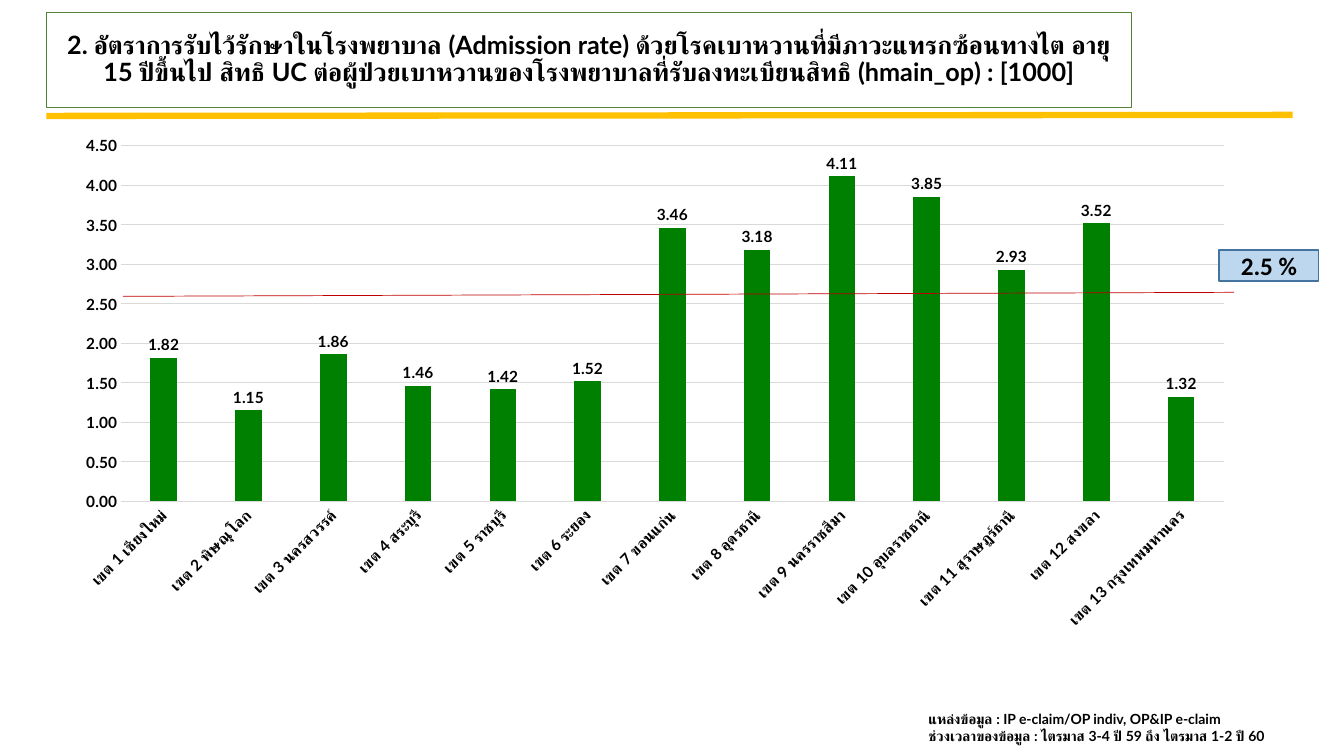
from dataclasses import dataclass

from lxml.etree import SubElement
from pptx import Presentation
from pptx.chart.data import CategoryChartData
from pptx.dml.color import RGBColor
from pptx.enum.chart import XL_CHART_TYPE as ChartType
from pptx.enum.chart import XL_LABEL_POSITION as LabelPos
from pptx.enum.chart import XL_TICK_MARK as Tick
from pptx.enum.shapes import MSO_CONNECTOR as Connector
from pptx.enum.shapes import MSO_SHAPE as Shape
from pptx.enum.text import MSO_ANCHOR as Anchor
from pptx.enum.text import MSO_AUTO_SIZE as AutoSize
from pptx.enum.text import PP_ALIGN as Align
from pptx.oxml.ns import qn
from pptx.util import Inches, Pt

BLACK = RGBColor(0x00, 0x00, 0x00)
WHITE = RGBColor(0xFF, 0xFF, 0xFF)
GOLD = RGBColor(0xFF, 0xC0, 0x00)
RED = RGBColor(0xC0, 0x00, 0x00)
GREEN = RGBColor(0x00, 0x80, 0x00)
DARK_GREEN = RGBColor(0x54, 0x82, 0x35)
GRID_GREY = RGBColor(0xD9, 0xD9, 0xD9)
PALE_BLUE = RGBColor(0xBD, 0xD7, 0xEE)
STEEL_BLUE = RGBColor(0x43, 0x73, 0x9E)

TITLE = (
    "2. อัตราการรับไว้รักษาในโรงพยาบาล (Admission rate) "
    "ด้วยโรคเบาหวานที่มีภาวะแทรกซ้อนทางไต อายุ 15 ปีขึ้นไป สิทธิ UC "
    "ต่อผู้ป่วยเบาหวานของโรงพยาบาลที่รับลงทะเบียนสิทธิ (hmain_op) : [1000]"
)
SOURCE_NOTES = (
    "แหล่งข้อมูล : IP e-claim/OP indiv, OP&IP e-claim",
    "ช่วงเวลาของข้อมูล : ไตรมาส 3-4 ปี 59 ถึง ไตรมาส 1-2 ปี 60",
)
ADMISSION_RATES = {
    "เขต 1 เชียงใหม่": 1.82,
    "เขต 2 พิษณุโลก": 1.15,
    "เขต 3 นครสวรรค์": 1.86,
    "เขต 4 สระบุรี": 1.46,
    "เขต 5 ราชบุรี": 1.42,
    "เขต 6 ระยอง": 1.52,
    "เขต 7 ขอนแก่น": 3.46,
    "เขต 8 อุดรธานี": 3.18,
    "เขต 9 นครราชสีมา": 4.11,
    "เขต 10 อุบลราชธานี": 3.85,
    "เขต 11 สุราษฎร์ธานี": 2.93,
    "เขต 12 สงขลา": 3.52,
    "เขต 13 กรุงเทพมหานคร": 1.32,
}


@dataclass
class Rule:
    x1: float
    y1: float
    x2: float
    y2: float
    color: RGBColor
    weight: float


TITLE_RULE = Rule(0.46, 1.15, 12.82, 1.14, GOLD, 4.5)
TARGET_RULE = Rule(1.22, 2.94, 12.24, 2.9, RED, 0.5)


def style_font(font, size: float, name: str = "Lato") -> None:
    font.name = name
    font.size = Pt(size)
    font.bold = True
    font.color.rgb = BLACK


def add_run(p, text: str, size: float, name: str = "Lato") -> None:
    r = p.add_run()
    r.text = text
    style_font(r.font, size, name)


def paint(sp, fill: RGBColor, line: RGBColor, weight: float) -> None:
    sp.fill.solid()
    sp.fill.fore_color.rgb = fill
    sp.line.color.rgb = line
    sp.line.width = Pt(weight)


def add_rule(slide, rule: Rule) -> None:
    ends = [Inches(v) for v in (rule.x1, rule.y1, rule.x2, rule.y2)]
    line = slide.shapes.add_connector(Connector.STRAIGHT, *ends)
    line.line.color.rgb = rule.color
    line.line.width = Pt(rule.weight)
    SubElement(line._element.spPr, qn("a:effectLst"))


def fill_title(slide) -> None:
    sp = slide.shapes.title
    sp.left, sp.top = Inches(0.46), Inches(0.12)
    sp.width, sp.height = Inches(10.76), Inches(0.95)
    paint(sp, WHITE, DARK_GREEN, 0.75)
    tf = sp.text_frame
    tf.word_wrap = True
    tf.auto_size = AutoSize.NONE
    tf.vertical_anchor = Anchor.MIDDLE
    p = tf.paragraphs[0]
    p.alignment = Align.CENTER
    p.line_spacing = 0.9
    add_run(p, TITLE, 18)


def add_rate_chart(slide) -> None:
    data = CategoryChartData(number_format="0.00")
    data.categories = list(ADMISSION_RATES)
    data.add_series("Series 1", list(ADMISSION_RATES.values()))
    chart = slide.shapes.add_chart(
        ChartType.COLUMN_CLUSTERED,
        Inches(0.62), Inches(1.25), Inches(11.75), Inches(5.09), data,
    ).chart
    chart.has_legend = False
    chart.has_title = False
    style_font(chart.font, 11)

    for axis in (chart.category_axis, chart.value_axis):
        axis.major_tick_mark = axis.minor_tick_mark = Tick.NONE
        style_font(axis.tick_labels.font, 11)
    regions, rates = chart.category_axis, chart.value_axis
    regions.format.line.color.rgb = GRID_GREY
    regions.format.line.width = Pt(0.75)
    regions._element.txPr.bodyPr.set("rot", "-2700000")
    rates.minimum_scale, rates.maximum_scale, rates.major_unit = 0, 4.5, 0.5
    rates.format.line.fill.background()
    rates.major_gridlines.format.line.color.rgb = GRID_GREY
    rates.major_gridlines.format.line.width = Pt(0.75)
    rates.tick_labels.number_format = "0.00"
    rates.tick_labels.number_format_is_linked = False

    plot = chart.plots[0]
    plot.gap_width, plot.overlap = 219, -27
    plot.vary_by_categories = False
    bars = plot.series[0]
    bars.format.fill.solid()
    bars.format.fill.fore_color.rgb = GREEN
    labels = bars.data_labels
    labels.show_value = True
    labels.position = LabelPos.OUTSIDE_END
    labels.number_format = "0.00"
    labels.number_format_is_linked = False
    style_font(labels.font, 11)


def add_target_badge(slide) -> None:
    sp = slide.shapes.add_shape(
        Shape.RECTANGLE, Inches(12.09), Inches(2.48), Inches(0.99), Inches(0.31)
    )
    sp.shadow.inherit = False
    paint(sp, PALE_BLUE, STEEL_BLUE, 1)
    tf = sp.text_frame
    tf.vertical_anchor = Anchor.MIDDLE
    p = tf.paragraphs[0]
    p.alignment = Align.CENTER
    add_run(p, "2.5 %", 18, "Calibri")


def add_source_notes(slide) -> None:
    box = slide.shapes.add_textbox(Inches(9.11), Inches(7), Inches(4.1), Inches(0.44))
    tf = box.text_frame
    tf.word_wrap = True
    tf.auto_size = AutoSize.SHAPE_TO_FIT_TEXT
    for i, note in enumerate(SOURCE_NOTES):
        p = tf.add_paragraph() if i else tf.paragraphs[0]
        add_run(p, note, 10)


def main() -> None:
    prs = Presentation()
    prs.slide_width, prs.slide_height = Inches(13.33), Inches(7.5)
    slide = prs.slides.add_slide(prs.slide_layouts[5])
    add_rule(slide, TITLE_RULE)
    fill_title(slide)
    add_rate_chart(slide)
    add_rule(slide, TARGET_RULE)
    add_target_badge(slide)
    add_source_notes(slide)
    prs.save("out.pptx")


if __name__ == "__main__":
    main()
